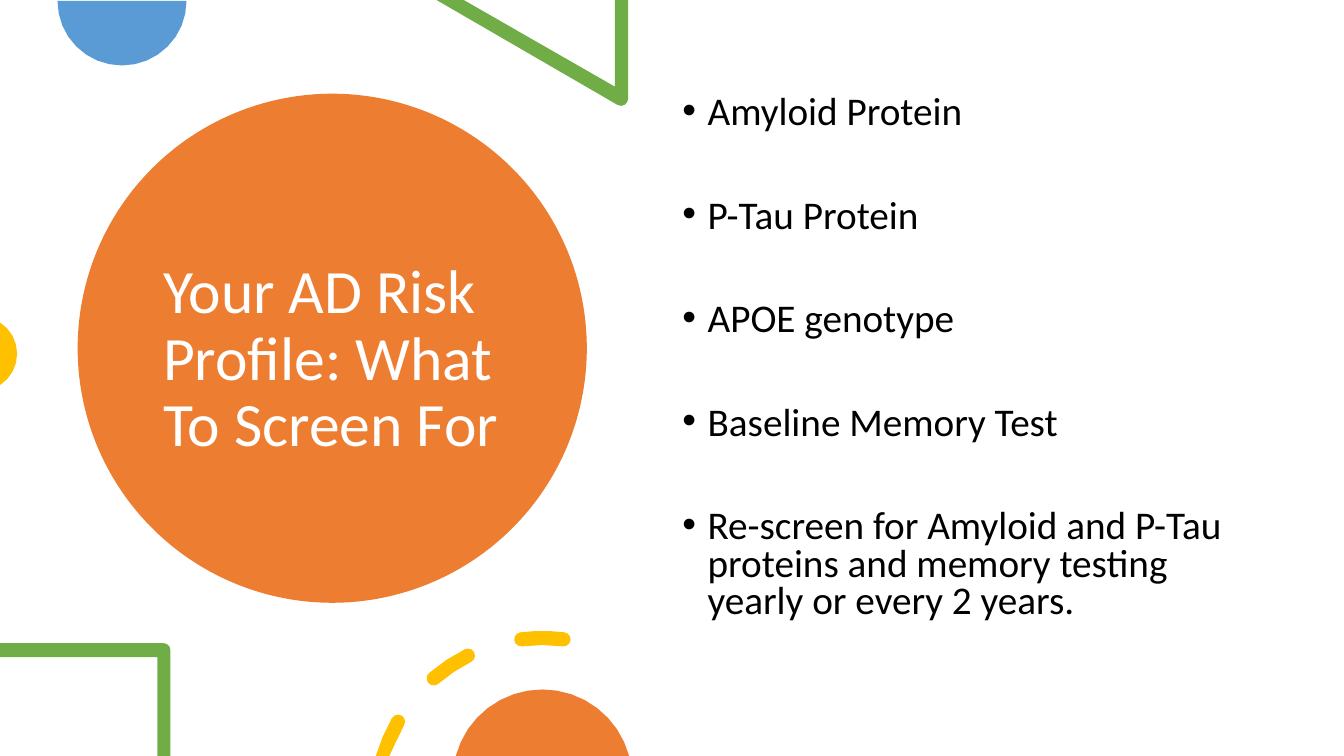
"""Build a slide listing what to screen for in an AD risk profile."""
from math import acos, ceil, cos, degrees, radians, sin

from lxml import etree
from pptx import Presentation
from pptx import util as u
from pptx.dml.color import RGBColor
from pptx.enum import shapes, text
from pptx.oxml import ns

WHITE = RGBColor(0xFF, 0xFF, 0xFF)
BLACK = RGBColor(0x00, 0x00, 0x00)
ORANGE = RGBColor(0xED, 0x7D, 0x31)
BLUE = RGBColor(0x5B, 0x9B, 0xD5)
GREEN = RGBColor(0x70, 0xAD, 0x47)
GOLD = RGBColor(0xFF, 0xC0, 0x00)
WIDTH, HEIGHT = 13.33, 7.5
CORNER = 0.07
TOLERANCE = 0.01


def arc(x, y, radius, start, end):
    """Return the fewest even points that keep an arc round."""
    widest = 2 * degrees(acos(1 - TOLERANCE / 3 / radius))
    steps = ceil(abs(end - start) / widest)
    angles = [radians(start + (end - start) * i / steps) for i in range(steps + 1)]
    return [(x + radius * cos(a), y + radius * sin(a)) for a in angles]


def dash(x, y, radius, start, end):
    """Return the outline of a round-capped piece of a ring."""
    middle = arc(x, y, radius, start, end)
    return (arc(x, y, radius + CORNER, start, end)
            + arc(*middle[-1], CORNER, end, end + 180)
            + arc(x, y, radius - CORNER, end, start)
            + arc(*middle[0], CORNER, start + 180, start + 360))


class SlideBuilder:
    """Hold the font and the current slide."""

    font = "Calibri"

    def __init__(self, slide):
        self.slide = slide

    def paint(self, shape, color):
        shape.shadow.inherit = False
        shape.fill.solid()
        shape.fill.fore_color.rgb = color
        shape.line.fill.background()

    def circle(self, left, top, size, color):
        disc = self.slide.shapes.add_shape(
            shapes.MSO_SHAPE.OVAL, u.Inches(left), u.Inches(top), u.Inches(size), u.Inches(size))
        self.paint(disc, color)

    def outline(self, color, *contours):
        """Fill the contours as one shape, held inside the slide edges."""
        builder = None
        for contour in contours:
            start, *rest = [(u.Inches(min(max(x, 0), WIDTH)), u.Inches(min(max(y, 0), HEIGHT)))
                            for x, y in contour]
            if builder is None:
                builder = self.slide.shapes.build_freeform(*start)
            else:
                builder.move_to(*start)
            builder.add_line_segments(rest)
        self.paint(builder.convert_to_shape(), color)

    def text(self, paragraphs, left, top, width, height, *, size, color, line_spacing,
             anchor=text.MSO_ANCHOR.TOP, gap=0, bullet=None):
        frame = self.slide.shapes.add_textbox(
            u.Inches(left), u.Inches(top), u.Inches(width), u.Inches(height)).text_frame
        frame.word_wrap = True
        frame.vertical_anchor = anchor
        for index, wording in enumerate(paragraphs):
            paragraph = frame.add_paragraph() if index else frame.paragraphs[0]
            paragraph.line_spacing = line_spacing
            paragraph.space_before = u.Pt(gap if index else 0)
            run = paragraph.add_run()
            run.text = wording
            run.font.name, run.font.size = self.font, u.Pt(size)
            run.font.color.rgb = color
            if bullet:
                self.bullet(paragraph, bullet)

    def bullet(self, paragraph, symbol):
        properties = paragraph._p.get_or_add_pPr()
        properties.set("marL", str(u.Inches(0.25)))
        properties.set("indent", str(u.Inches(-0.25)))
        etree.SubElement(properties, ns.qn("a:buFont"), typeface="Arial")
        etree.SubElement(properties, ns.qn("a:buChar"), char=symbol)


def main():
    deck = Presentation()
    deck.slide_width, deck.slide_height = u.Inches(WIDTH), u.Inches(HEIGHT)
    page = SlideBuilder(deck.slides.add_slide(deck.slide_layouts[6]))

    page.circle(0.77, 0.93, 5.05, ORANGE)
    page.text(["Your AD Risk Profile: What To Screen For"], 1.52, 1.35, 3.54, 4.45,
              size=44, color=WHITE, line_spacing=0.9, anchor=text.MSO_ANCHOR.MIDDLE)

    page.outline(BLUE, arc(1.21, 0.01, 0.64, 0, 180))
    page.outline(GREEN, [(4.6, 0), (4.33, 0), *arc(6.16, 0.98, CORNER, 120, 0),
                         (6.23, 0), (6.1, 0), (6.1, 0.86)])
    page.outline(GOLD, arc(-0.2, 3.51, 0.37, -57, 57))

    screenings = [
        "Amyloid Protein",
        "P-Tau Protein",
        "APOE genotype",
        "Baseline Memory Test",
        "Re-screen for Amyloid and P-Tau proteins and memory testing yearly or every 2 years.",
    ]
    page.text(screenings, 6.67, 0.9, 5.75, 5.35, size=28, color=BLACK,
              line_spacing=0.8, gap=47, bullet="•")

    page.outline(GREEN, [(0, 6.52), (0, 6.38), *arc(1.62, 6.45, CORNER, -90, 0),
                         (1.69, 7.5), (1.56, 7.5), (1.56, 6.52)])
    dash_angles = [(196.2, 209.8), (229.2, 243.4), (262.7, 277.3)]
    page.outline(GOLD, *(dash(5.38, 7.98, 1.65, *angles) for angles in dash_angles))
    page.outline(ORANGE, arc(5.38, 7.73, 0.89, 195, 345))

    deck.save("out.pptx")


if __name__ == "__main__":
    main()
